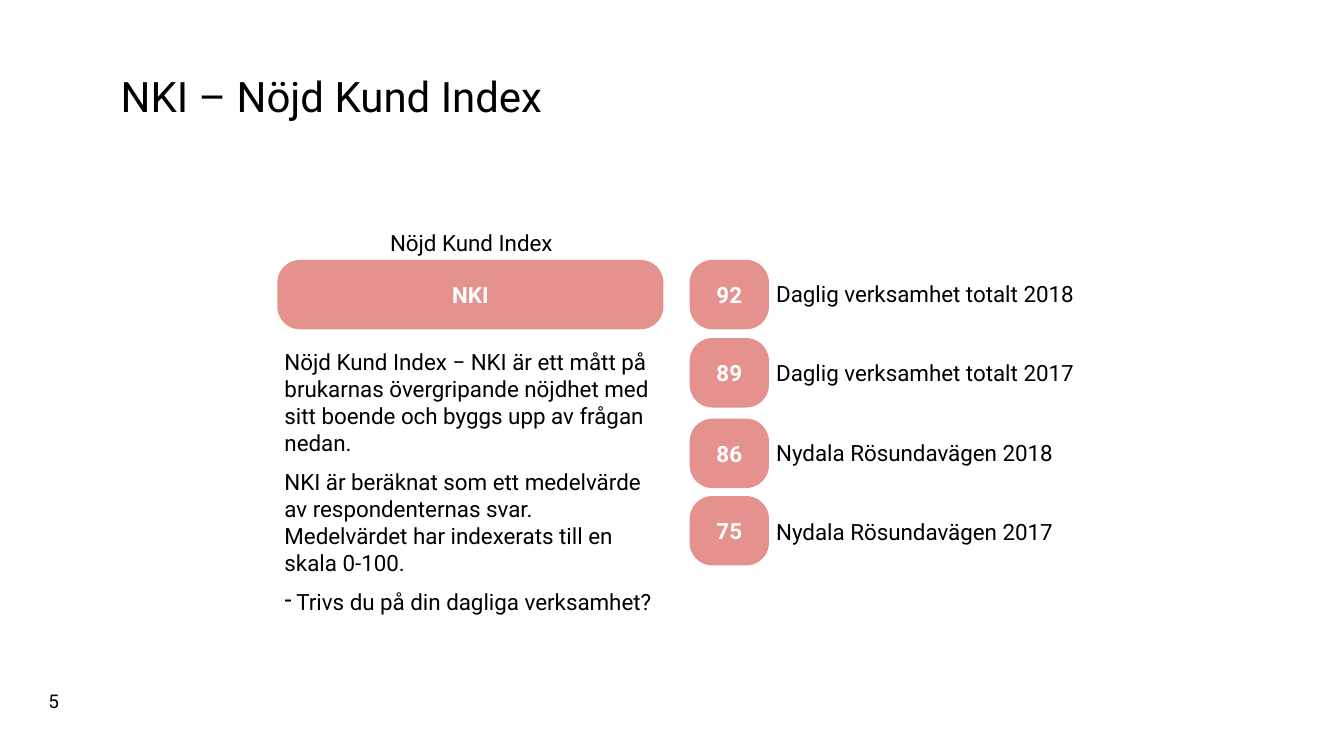
from lxml.etree import SubElement
from pptx import Presentation
from pptx.dml.color import RGBColor
from pptx.enum.shapes import MSO_SHAPE
from pptx.enum.text import MSO_ANCHOR, PP_ALIGN
from pptx.oxml.ns import qn
from pptx.util import Cm, Pt

COLOURS = {"text": "000000", "badge": "E5928E", "badge_text": "FFFFFF"}
TEXT_INSETS = (0.18, 0.13, 0.13, 0.1)
PLAIN_INSETS = (0.25, 0.13, 0.25, 0.13)


class IndexSlide:
    """Holds the style and the slide, and adds each kind of element."""

    font_name = "Roboto"
    body_size = 16

    def __init__(self, deck):
        self.slide = deck.slides.add_slide(deck.slide_layouts[5])

    def format_runs(self, paragraph, size, colour="text", bold=False):
        for run in paragraph.runs:
            run.font.name = self.font_name
            run.font.size = Pt(size)
            run.font.bold = bold
            run.font.color.rgb = RGBColor.from_string(COLOURS[colour])

    def set_insets(self, frame, insets):
        (frame.margin_left, frame.margin_top,
         frame.margin_right, frame.margin_bottom) = map(Cm, insets)

    def add_title(self, wording, left, top, width, height):
        title = self.slide.shapes.title
        title.left, title.top, title.width, title.height = map(Cm, (left, top, width, height))
        frame = title.text_frame
        frame.text = wording
        frame.vertical_anchor = MSO_ANCHOR.BOTTOM
        self.set_insets(frame, PLAIN_INSETS)
        heading = frame.paragraphs[0]
        heading.alignment = PP_ALIGN.LEFT
        heading.line_spacing = 0.9
        self.format_runs(heading, 30)

    def add_text(self, entries, left, top, width, height, size=body_size,
                 insets=TEXT_INSETS, wrap=True):
        """Adds a text box from (wording, space before in points) pairs."""
        box = self.slide.shapes.add_textbox(*map(Cm, (left, top, width, height)))
        frame = box.text_frame
        frame.word_wrap = wrap
        self.set_insets(frame, insets)
        for index, (wording, space) in enumerate(entries):
            paragraph = frame.paragraphs[0] if index == 0 else frame.add_paragraph()
            paragraph.text = wording
            paragraph.space_before = Pt(space)
            self.format_runs(paragraph, size)
        return frame.paragraphs

    def add_dash(self, paragraph, indent):
        properties = paragraph._p.get_or_add_pPr()
        properties.set("marL", str(Cm(indent)))
        properties.set("indent", str(-Cm(indent)))
        SubElement(properties, qn("a:buChar")).set("char", "-")

    def add_badge(self, wording, left, top, width, height=1.75):
        badge = self.slide.shapes.add_shape(
            MSO_SHAPE.ROUNDED_RECTANGLE, *map(Cm, (left, top, width, height)))
        badge.adjustments[0] = 0.33
        badge.shadow.inherit = False
        badge.fill.solid()
        badge.fill.fore_color.rgb = RGBColor.from_string(COLOURS["badge"])
        badge.line.fill.background()
        frame = badge.text_frame
        frame.text = wording
        frame.vertical_anchor = MSO_ANCHOR.MIDDLE
        frame.paragraphs[0].alignment = PP_ALIGN.CENTER
        self.format_runs(frame.paragraphs[0], self.body_size, "badge_text", True)


def main():
    deck = Presentation()
    deck.slide_width, deck.slide_height = Cm(33.87), Cm(19.05)
    page = IndexSlide(deck)
    page.add_title("NKI – Nöjd Kund Index", 2.79, 1.6, 28.9, 1.6)
    page.add_text([("5", 0)], 0.97, 17.25, 1.1, 0.83, 13.5, PLAIN_INSETS, wrap=False)

    explanation = page.add_text([
        ("Nöjd Kund Index", 0),
        ("Nöjd Kund Index − NKI är ett mått på brukarnas övergripande nöjdhet "
         "med sitt boende och byggs upp av frågan nedan.", 66),
        ("NKI är beräknat som ett medelvärde av respondenternas svar. "
         "Medelvärdet har indexerats till en skala 0-100.", 9),
        ("Trivs du på din dagliga verksamhet?", 9),
    ], 6.99, 5.64, 9.73, 10.26)
    explanation[0].alignment = PP_ALIGN.CENTER
    page.add_dash(explanation[-1], 0.3)
    page.add_badge("NKI", 6.99, 6.55, 9.73)

    scores = [
        ("92", "Daglig verksamhet totalt 2018", 6.55),
        ("89", "Daglig verksamhet totalt 2017", 8.52),
        ("86", "Nydala Rösundavägen 2018", 10.55),
        ("75", "Nydala Rösundavägen 2017", 12.5),
    ]
    for score, _, top in scores:
        page.add_badge(score, 17.38, top, 2)
    page.add_text([(label, 37.5 if index else 0) for index, (_, label, _) in enumerate(scores)],
                  19.38, 6.93, 10.64, 7.32)
    deck.save("out.pptx")


if __name__ == "__main__":
    main()
